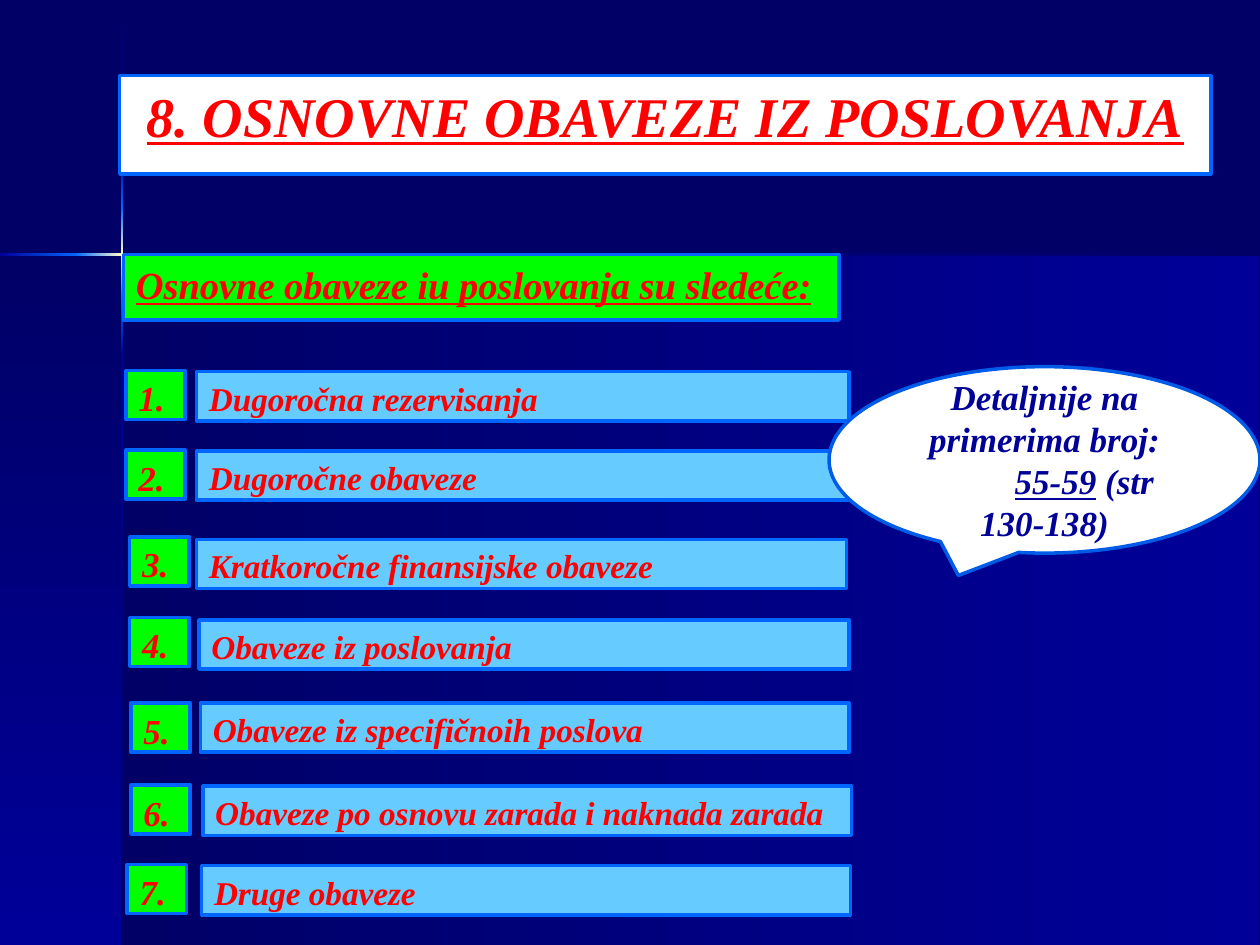
import copy
import pptx
import pptx.util
import pptx.dml.color
import pptx.enum.shapes
import pptx.enum.text

Pt = pptx.util.Pt
Kind = pptx.enum.shapes.MSO_SHAPE
Align = pptx.enum.text.PP_ALIGN
Anchor = pptx.enum.text.MSO_ANCHOR
HUES = {
    "night": "000066", "navy": "000099", "blue": "0066FF", "cream": "FFFFCC",
    "white": "FFFFFF", "green": "00FF00", "sky": "66CCFF", "red": "FF0000",
    "rim": "005CE7",
}
RGB = {name: pptx.dml.color.RGBColor.from_string(hue) for name, hue in HUES.items()}

deck = pptx.Presentation()
deck.slide_width = pptx.util.Inches(10)
deck.slide_height = pptx.util.Inches(7.5)
slide = deck.slides.add_slide(deck.slide_layouts[6])
slide.background.fill.solid()
slide.background.fill.fore_color.rgb = RGB["night"]

# Grid of 100 columns by 75 rows
COL = deck.slide_width / 100
ROW = deck.slide_height / 75


def box(x, y, w, h, fill=None, line=None, kind=Kind.RECTANGLE):
    shape = slide.shapes.add_shape(
        kind, round(x * COL), round(y * ROW), round(w * COL), round(h * ROW))
    shape.shadow.inherit = False
    if fill:
        shape.fill.solid()
        shape.fill.fore_color.rgb = RGB[fill]
    if line:
        shape.line.color.rgb = RGB[line]
        shape.line.width = Pt(2)
    else:
        shape.line.fill.background()
    frame = shape.text_frame
    frame.word_wrap = True
    frame.vertical_anchor = Anchor.TOP
    return shape


def write(para, text, size, hue="red", under=False, align=Align.LEFT):
    para.alignment = align
    run = para.add_run()
    run.text = text
    font = run.font
    font.name = "Times New Roman"
    font.size = Pt(size)
    font.bold = font.italic = True
    font.underline = under
    font.color.rgb = RGB[hue]


# Backdrop panels and the glowing cross: place, fade hues, downward or not
fades = [
    (9.7, 20.2, 90.2, 54.8, ["night", "navy"], False),
    (0, 20.2, 9.7, 54.8, ["night", "navy"], True),
    (9.6, 0.1, 0.2, 12, ["night", "navy"], True),
    (9.6, 28.2, 0.2, 46.8, ["navy", "night"], True),
    (17.7, 20.1, 82.2, 0.2, ["navy", "night"], False),
    (9.6, 23.8, 0.2, 4.4, ["blue", "navy"], True),
    (9.6, 12.1, 0.2, 4.4, ["navy", "blue"], True),
    (9.6, 16.5, 0.2, 7.3, ["blue", "cream", "blue"], True),
    (0, 20.1, 6.1, 0.2, ["navy", "blue"], False),
    (13.3, 20.1, 4.4, 0.2, ["blue", "navy"], False),
    (6, 20.1, 7.3, 0.2, ["blue", "cream", "blue"], False),
]
for x, y, w, h, hues, down in fades:
    panel = box(x, y, w, h)
    panel.fill.gradient()
    panel.fill.gradient_angle = 270 if down else 0
    if len(hues) == 3:
        first = panel.element.xpath(".//a:gs")[0]
        first.addnext(copy.deepcopy(first))
    for spot, (stop, hue) in enumerate(zip(panel.fill.gradient_stops, hues)):
        stop.color.rgb = RGB[hue]
        stop.position = spot / (len(hues) - 1)

# Title and heading
title = box(9.5, 6, 86.6, 7.8, "white", "blue")
write(title.text_frame.paragraphs[0], "8. OSNOVNE OBAVEZE IZ POSLOVANJA", 32,
      under=True, align=Align.CENTER)
head = box(9.8, 20.2, 56.8, 5.2, "green", "blue")
write(head.text_frame.paragraphs[0],
      "Osnovne obaveze iu poslovanja su sledeće:", 22, under=True)

# Numbered list: number left and top, bar left, top and width, wording
items = [
    (10, 29.4, 15.6, 29.5, 51.8, "Dugoročna rezervisanja"),
    (10, 35.7, 15.6, 35.8, 51.8, "Dugoročne obaveze"),
    (10.3, 42.6, 15.6, 42.8, 51.6, "Kratkoročne finansijske obaveze"),
    (10.3, 49, 15.8, 49.2, 51.6, "Obaveze iz poslovanja"),
    (10.4, 55.8, 15.9, 55.8, 51.5, "Obaveze iz specifičnoih poslova"),
    (10.4, 62.3, 16.1, 62.4, 51.5, "Obaveze po osnovu zarada i naknada zarada"),
    (10.1, 68.6, 16, 68.7, 51.5, "Druge obaveze"),
]
for count, (left, top, x, y, w, text) in enumerate(items, 1):
    badge = box(left, top, 4.7, 3.9, "green", "blue")
    write(badge.text_frame.paragraphs[0], f"{count}.", 20)
    bar = box(x, y, w, 3.9, "sky", "blue")
    write(bar.text_frame.paragraphs[0], text, 19)

# Callout with the example numbers
note = box(65.8, 29.1, 34.2, 14.8, "white", "rim", Kind.OVAL_CALLOUT)
note.adjustments[0] = -0.2
note.adjustments[1] = 0.62
frame = note.text_frame
frame.vertical_anchor = Anchor.MIDDLE
write(frame.paragraphs[0], "Detaljnije na primerima broj:", 20, "navy",
      align=Align.CENTER)
last = frame.add_paragraph()
write(last, "55-59", 20, "navy", True, Align.CENTER)
write(last, " (str 130-138)", 20, "navy", align=Align.CENTER)
# First-line indent pushes the example numbers to the right
last._p.get_or_add_pPr().set("indent", str(round(6.3 * COL)))

deck.save("out.pptx")
